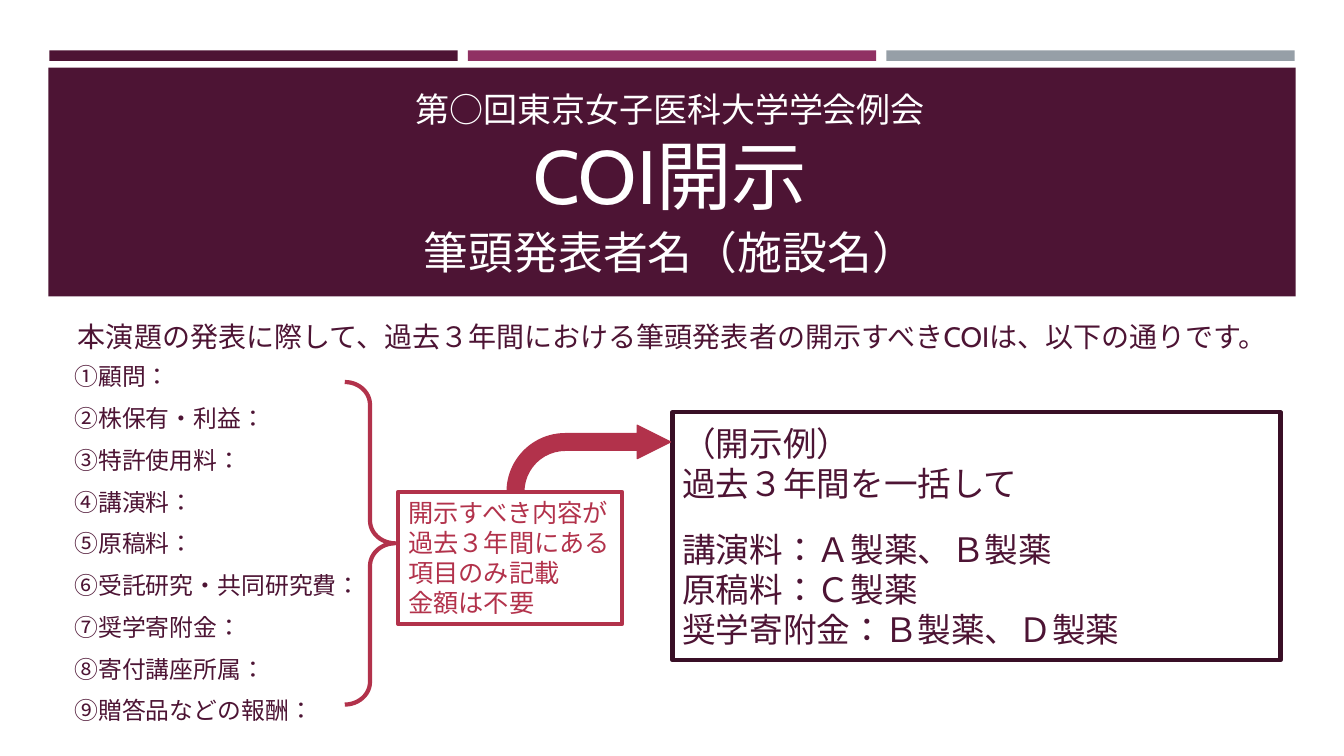
from dataclasses import dataclass

from lxml import etree
from pptx import Presentation, util as u
from pptx.dml.color import RGBColor
from pptx.enum import lang, shapes, text
from pptx.oxml.ns import qn

COLUMN = ROW = u.Inches(0.1)
FONT = "Cabin"
PLUM = RGBColor(0x4D, 0x14, 0x34)
DARK_PLUM = RGBColor(0x39, 0x0F, 0x26)
MAGENTA = RGBColor(0x90, 0x31, 0x63)
GREY = RGBColor(0x96, 0x9F, 0xA7)
CRIMSON = RGBColor(0xB2, 0x32, 0x4B)
WHITE = RGBColor(0xFF, 0xFF, 0xFF)

LEFT, CENTER = text.PP_ALIGN.LEFT, text.PP_ALIGN.CENTER
TOP, MIDDLE, BOTTOM = (text.MSO_ANCHOR.TOP, text.MSO_ANCHOR.MIDDLE,
                       text.MSO_ANCHOR.BOTTOM)
KIND = shapes.MSO_SHAPE


@dataclass
class Area:
    """A place on the grid, in columns and rows."""
    column: float
    row: float
    columns: float
    rows: float

    def lengths(self) -> tuple[int, ...]:
        return (round(self.column * COLUMN), round(self.row * ROW),
                round(self.columns * COLUMN), round(self.rows * ROW))


@dataclass
class Line:
    words: str
    size: float
    before: float = 0
    after: float = 0


@dataclass
class Block:
    """Paragraphs, each made of lines parted by line breaks."""
    paragraphs: list[list[Line]]
    color: RGBColor
    align: text.PP_ALIGN = LEFT
    anchor: text.MSO_ANCHOR = MIDDLE
    wrap: bool = True


@dataclass
class Figure:
    area: Area
    kind: shapes.MSO_SHAPE = KIND.RECTANGLE
    fill: RGBColor | None = None
    line: RGBColor | None = None
    weight: float = 3
    adjustments: tuple[float, ...] = ()
    block: Block | None = None


def add_span(para, line: Line, color: RGBColor) -> None:
    span = para.add_run()
    span.text = line.words
    span.font.size = u.Pt(line.size)
    span.font.color.rgb = color
    span.font.name = FONT
    span.font.language_id = lang.MSO_LANGUAGE_ID.JAPANESE
    east_asian = etree.Element(qn("a:ea"), typeface=FONT)
    span.font._element.find(qn("a:latin")).addnext(east_asian)


def write_block(box, block: Block) -> None:
    frame = box.text_frame
    frame.word_wrap = block.wrap
    frame.vertical_anchor = block.anchor
    for index, lines in enumerate(block.paragraphs):
        para = frame.add_paragraph() if index else frame.paragraphs[0]
        para.alignment = block.align
        para.space_before = u.Pt(lines[0].before if index else 0)
        para.space_after = u.Pt(lines[-1].after)
        for number, line in enumerate(lines):
            if number:
                para.add_line_break()
            add_span(para, line, block.color)


def add_text(page, area: Area, block: Block) -> None:
    write_block(page.shapes.add_textbox(*area.lengths()), block)


def add_figure(page, figure: Figure) -> None:
    shape = page.shapes.add_shape(figure.kind, *figure.area.lengths())
    shape.shadow.inherit = False
    if figure.fill is None:
        shape.fill.background()
    else:
        shape.fill.solid()
        shape.fill.fore_color.rgb = figure.fill
    if figure.line is None:
        shape.line.fill.background()
    else:
        shape.line.color.rgb = figure.line
        shape.line.width = u.Pt(figure.weight)
    for index, value in enumerate(figure.adjustments):
        shape.adjustments[index] = value
    if figure.block:
        write_block(shape, figure.block)


BARS = [Figure(Area(4.9 + 41.5 * index, 5, 40.5, 1.05), fill=color)
        for index, color in enumerate((PLUM, MAGENTA, GREY))]
BANNER = Figure(Area(4.8, 6.7, 123.7, 22.7), fill=PLUM)

TITLE = Block([[Line("第○回東京女子医科大学学会例会", 24.3),
                Line("COI開示", 54)]], WHITE, CENTER)
PRESENTER = Block([[Line("筆頭発表者名（施設名）", 32, after=6)]],
                  WHITE, CENTER, BOTTOM)
INTRO = Block([[Line("本演題の発表に際して、過去３年間における筆頭発表者の"
                     "開示すべきCOIは、以下の通りです。", 20, after=6)]],
              PLUM, CENTER, wrap=False)
ITEMS = Block([[Line(words, 17, before=3.4, after=6)] for words in (
    "①顧問：", "②株保有・利益：", "③特許使用料：", "④講演料：", "⑤原稿料：",
    "⑥受託研究・共同研究費：", "⑦奨学寄附金：", "⑧寄付講座所属：",
    "⑨贈答品などの報酬：")], PLUM)
EXAMPLE = Block([[Line("（開示例）", 24)],
                 [Line("過去３年間を一括して", 24, after=18)],
                 [Line("講演料：Ａ製薬、Ｂ製薬", 24)],
                 [Line("原稿料：Ｃ製薬", 24)],
                 [Line("奨学寄附金：Ｂ製薬、Ｄ製薬", 24)]], PLUM)
ADVICE = Block([[Line(words, 18)] for words in (
    "開示すべき内容が", "過去３年間にある", "項目のみ記載", "金額は不要")],
    CRIMSON, anchor=TOP)

TEXTS = [
    (Area(6.4, 7.9, 120.2, 14.8), TITLE),
    (Area(6.4, 22.6, 120.2, 5.5), PRESENTER),
    (Area(6.4, 37.5, 120.6, 32.8), ITEMS),
    (Area(6.4, 29.3, 120.6, 8.2), INTRO),
]
DISCLOSURE = [
    Figure(Area(66.7, 40.9, 60.3, 24.6), fill=WHITE, line=DARK_PLUM,
           block=EXAMPLE),
    Figure(Area(34.2, 37.9, 5, 32), KIND.RIGHT_BRACE, line=CRIMSON,
           adjustments=(0.45, 0.5)),
    Figure(Area(39.5, 48.8, 22.2, 13.1), fill=WHITE, line=CRIMSON,
           block=ADVICE),
    Figure(Area(50.3, 42.2, 16.2, 6.6), KIND.BENT_ARROW, CRIMSON, CRIMSON, 1,
           (0.25, 0.25, 0.5, 0.88)),
]


def main() -> None:
    deck = Presentation()
    deck.slide_width, deck.slide_height = u.Inches(13.33), u.Inches(7.5)
    page = deck.slides.add_slide(deck.slide_layouts[6])
    for figure in [*BARS, BANNER]:
        add_figure(page, figure)
    for area, block in TEXTS:
        add_text(page, area, block)
    for figure in DISCLOSURE:
        add_figure(page, figure)
    deck.save("out.pptx")


if __name__ == "__main__":
    main()
